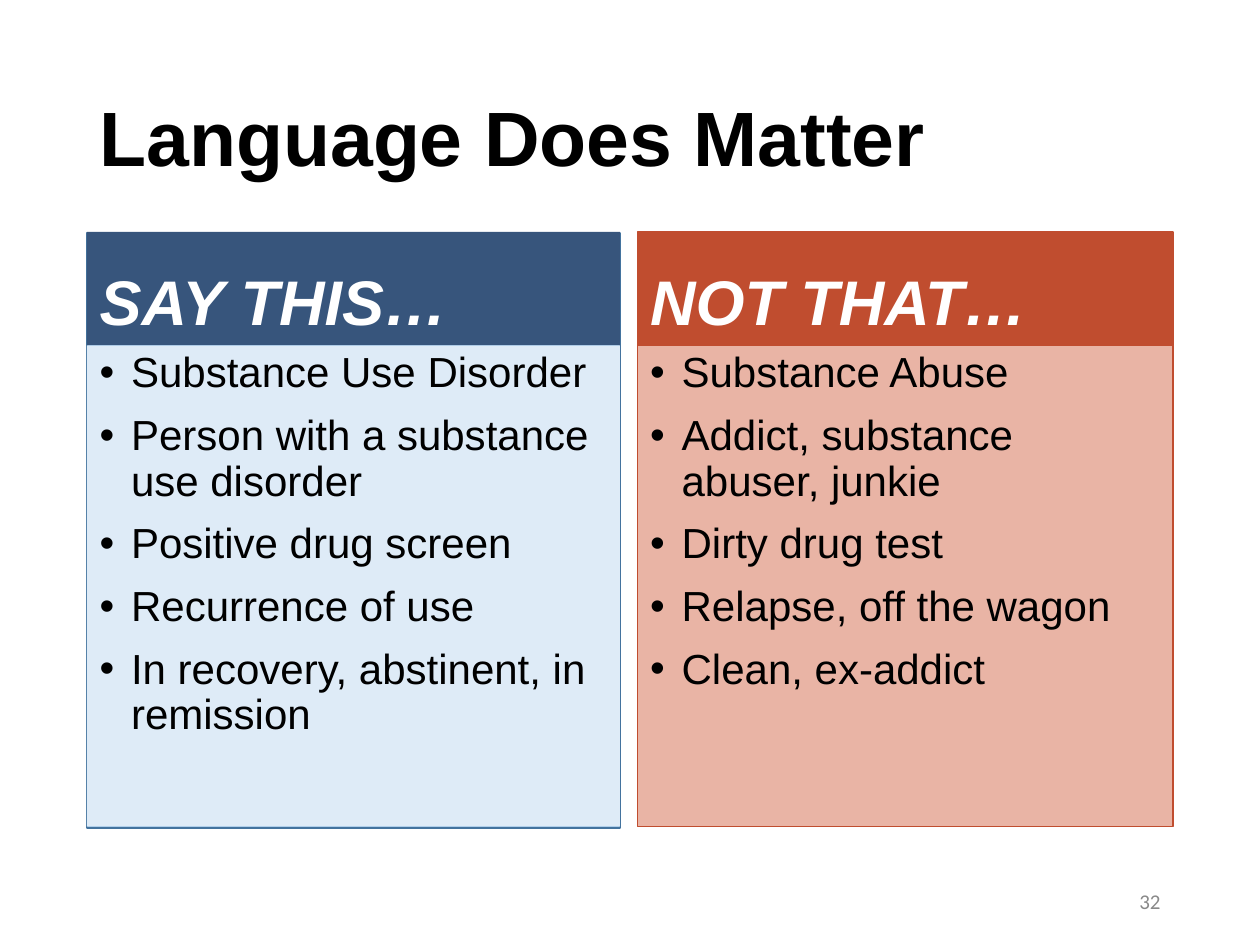
import pptx
import pptx.dml.color
import pptx.enum.shapes
import pptx.enum.text
import pptx.oxml.ns
import pptx.util
from lxml import etree

Inches, Pt = pptx.util.Inches, pptx.util.Pt
Anchor = pptx.enum.text.MSO_ANCHOR
Align = pptx.enum.text.PP_ALIGN

TITLE = "Language Does Matter"
PAGE_NUMBER = "32"
COLUMNS = [
    {
        "heading": "SAY THIS…",
        "items": [
            "Substance Use Disorder",
            "Person with a substance use disorder",
            "Positive drug screen",
            "Recurrence of use",
            "In recovery, abstinent, in remission",
        ],
        "width": 4.23, "header_fill": "navy", "list_fill": "pale_blue", "line": None,
    },
    {
        "heading": "NOT THAT…",
        "items": [
            "Substance Abuse",
            "Addict, substance abuser, junkie",
            "Dirty drug test",
            "Relapse, off the wagon",
            "Clean, ex-addict",
        ],
        "width": 4.25, "header_fill": "rust", "list_fill": "pale_rust", "line": "rust",
    },
]

COLORS = {
    "black": "000000", "white": "FFFFFF", "gray": "898989",
    "navy": "37557C", "pale_blue": "DEEBF7", "blue": "5B9BD5", "blue_line": "43739E",
    "rust": "C04D2F", "pale_rust": "E9B4A5",
}
TITLE_FONT = {"name": "Arial", "size": Pt(44), "bold": True, "color": "black"}
HEADING_FONT = {"name": "Arial", "size": Pt(36), "bold": True, "italic": True, "color": "white"}
LIST_FONT = {"name": "Arial", "size": Pt(24), "bold": False, "color": "black"}
NUMBER_FONT = {"name": "Calibri", "size": Pt(12), "color": "gray"}

WIDTH, HEIGHT = 10, 7.5
MARGIN, GAP = 0.69, 0.14
TITLE_TOP, HEADER_TOP, LIST_TOP, LIST_BOTTOM = 0.4, 1.84, 2.74, 6.56
NUMBER_BOX = (7.06, 6.95, 2.25, 0.4)


def color(name):
    return pptx.dml.color.RGBColor.from_string(COLORS[name])


def place(shape, left, top, width, height):
    for side, value in zip(("left", "top", "width", "height"), (left, top, width, height)):
        setattr(shape, side, Inches(value))


def paint(shape, fill, line, line_width=0.75):
    shape.fill.solid()
    shape.fill.fore_color.rgb = color(fill)
    if line:
        shape.line.color.rgb = color(line)
        shape.line.width = Pt(line_width)
    else:
        shape.line.fill.background()


def add_bullet(paragraph):
    properties = paragraph._p.get_or_add_pPr()
    properties.set("marL", str(Inches(0.25)))
    properties.set("indent", str(-Inches(0.25)))
    for tag, attribute, value in (("a:buFont", "typeface", "Arial"), ("a:buChar", "char", "•")):
        etree.SubElement(properties, pptx.oxml.ns.qn(tag)).set(attribute, value)


def write(shape, lines, font, anchor, align=Align.LEFT, bullets=False, line_spacing=0.9):
    frame = shape.text_frame
    frame.auto_size = pptx.enum.text.MSO_AUTO_SIZE.NONE
    frame.word_wrap = True
    frame.vertical_anchor = anchor
    frame.text = "\n".join(lines)
    for index, paragraph in enumerate(frame.paragraphs):
        if bullets:
            add_bullet(paragraph)
        paragraph.alignment = align
        paragraph.line_spacing = line_spacing
        paragraph.space_before = Pt(10 if index else 0)
        for run in paragraph.runs:
            for attribute, value in font.items():
                if attribute == "color":
                    run.font.color.rgb = color(value)
                else:
                    setattr(run.font, attribute, value)


def main():
    presentation = pptx.Presentation()
    presentation.slide_width, presentation.slide_height = Inches(WIDTH), Inches(HEIGHT)
    comparison_layout = presentation.slide_layouts[4]
    slide = presentation.slides.add_slide(comparison_layout)

    title, *bodies = slide.placeholders
    place(title, MARGIN, TITLE_TOP, WIDTH - 2 * MARGIN, HEADER_TOP - TITLE_TOP)
    write(title, [TITLE], TITLE_FONT, Anchor.MIDDLE)

    left = MARGIN
    for column, header, body in zip(COLUMNS, bodies[::2], bodies[1::2]):
        place(header, left, HEADER_TOP, column["width"], LIST_TOP - HEADER_TOP)
        paint(header, column["header_fill"], column["line"])
        write(header, [column["heading"]], HEADING_FONT, Anchor.BOTTOM)

        place(body, left, LIST_TOP, column["width"], LIST_BOTTOM - LIST_TOP)
        paint(body, column["list_fill"], column["line"])
        write(body, column["items"], LIST_FONT, Anchor.TOP, bullets=True)
        left += column["width"] + GAP

    backing = slide.shapes.add_shape(pptx.enum.shapes.MSO_SHAPE.RECTANGLE, 0, 0, 0, 0)
    place(backing, MARGIN, HEADER_TOP + 0.01, COLUMNS[0]["width"], LIST_BOTTOM - HEADER_TOP)
    backing.shadow.inherit = False
    paint(backing, "blue", "blue_line", 1)
    title._element.addprevious(backing._element)

    number = slide.shapes.add_textbox(*map(Inches, NUMBER_BOX))
    write(number, [PAGE_NUMBER], NUMBER_FONT, Anchor.MIDDLE, Align.RIGHT, line_spacing=1.0)

    presentation.save("out.pptx")


if __name__ == "__main__":
    main()
